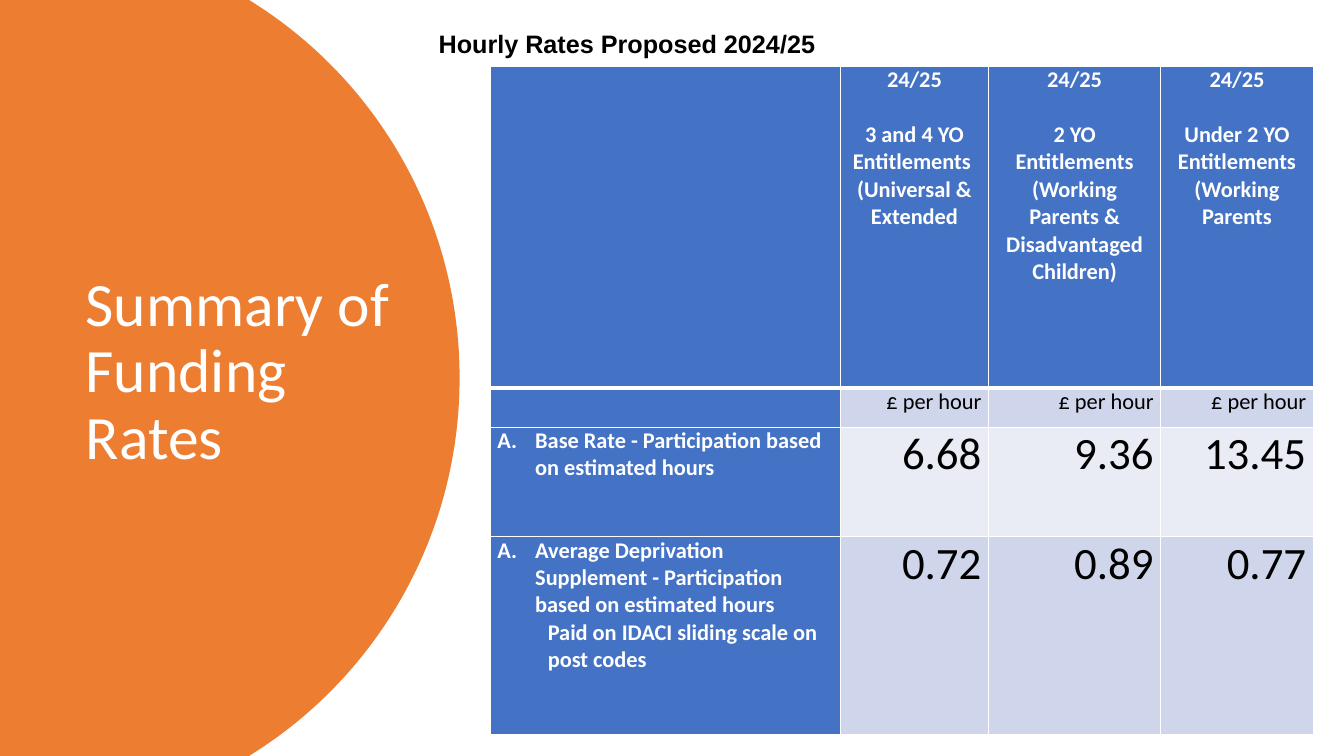
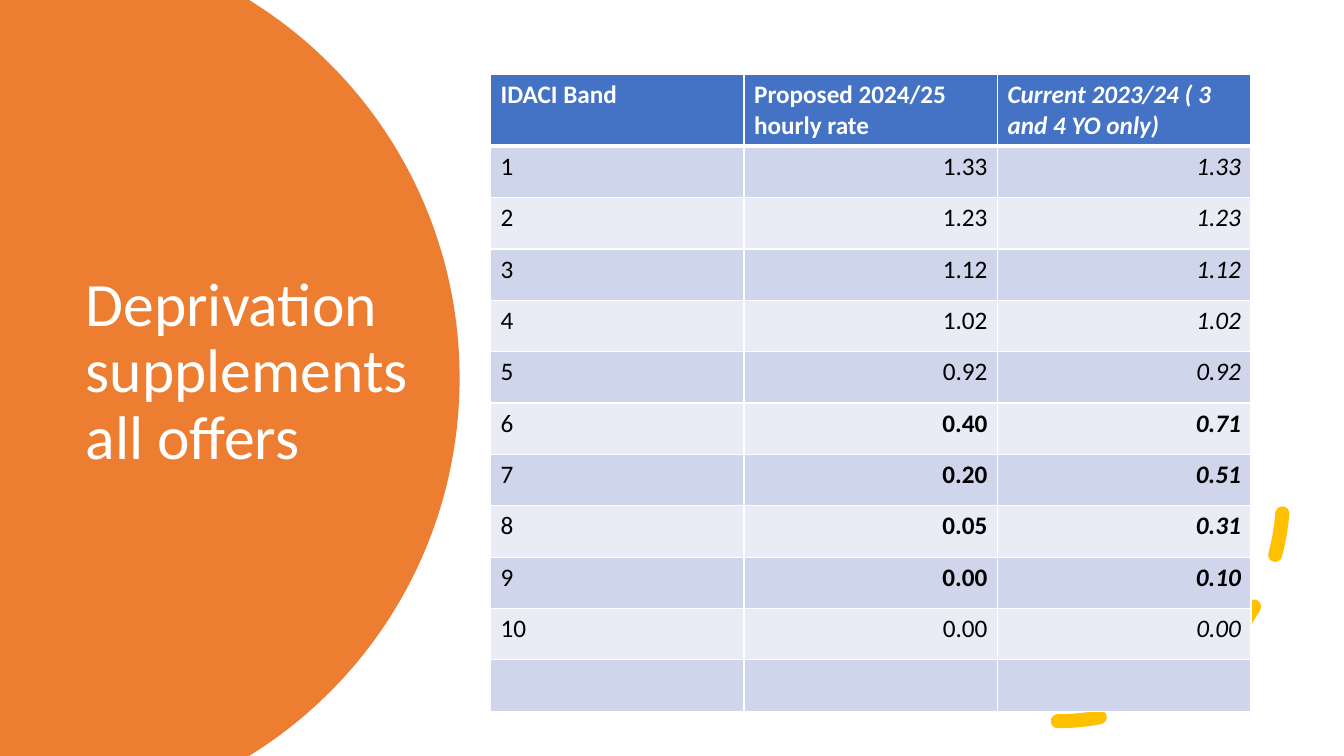
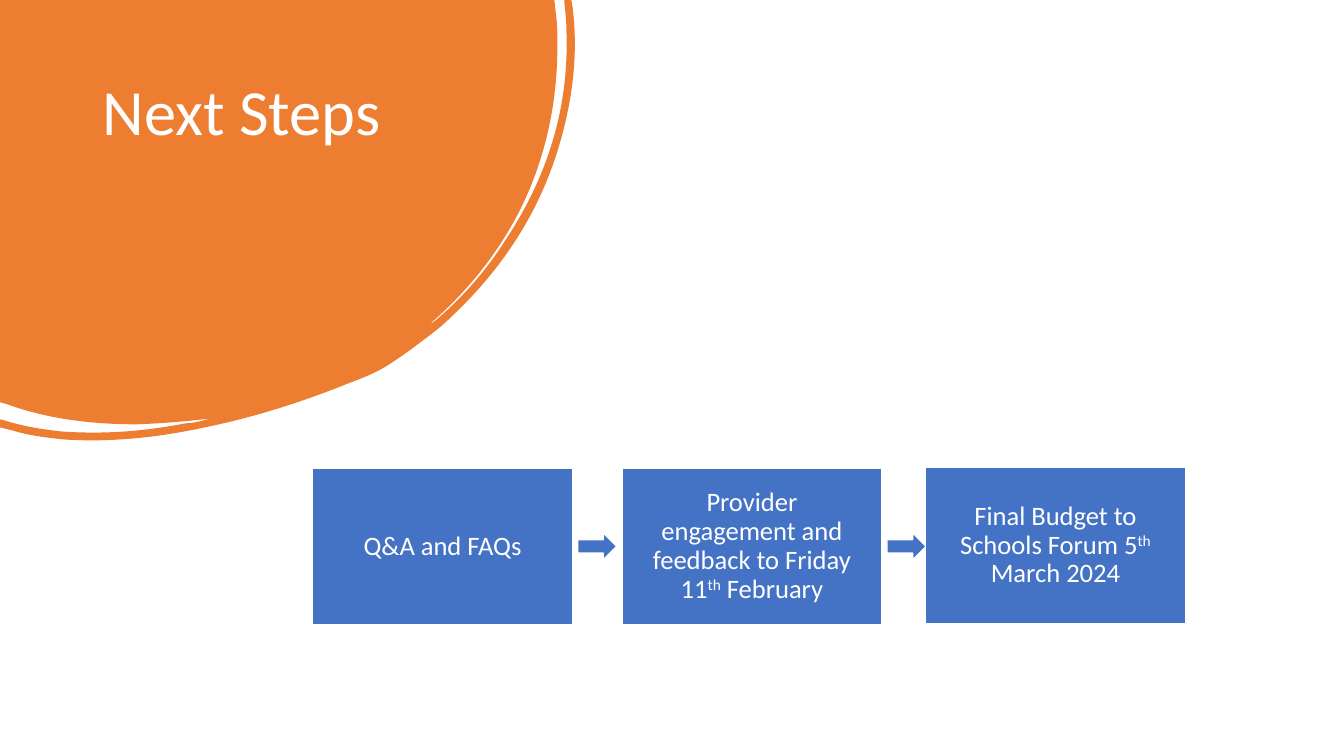
from pptx import Presentation
from pptx import util as u
from pptx.dml.color import RGBColor
from pptx.enum import dml, shapes, text
from pptx.oxml import ns
from lxml import etree

Pt = u.Pt
ORANGE, BLUE, AMBER = "ED7D31", "4472C4", "FFC000"
WHITE, BLACK = "FFFFFF", "000000"
BANDS = ("CFD5EA", "E9EBF5")
FONT = "Calibri"
LEFT, CENTER, RIGHT = text.PP_ALIGN.LEFT, text.PP_ALIGN.CENTER, text.PP_ALIGN.RIGHT

# Outlines in points: a pair is a line, six numbers are a Bezier curve.
HALF_DISC = [
    (0, 0), (178, 0), (188, 6.5),
    (273, 63.4, 328.3, 160.6, 328.3, 270),
    (328.3, 379.4, 273, 476.6, 188, 533.5),
    (178, 540), (0, 540),
]
SWOOSH = [
    (0, 0), (396, 0), (397.4, 12.2),
    (398.2, 18.7, 398.2, 25.9, 398.2, 32.4),
    (398.2, 72.7, 390.2, 110.9, 373, 146.9),
    (357.1, 179.3, 334.8, 207.4, 307.4, 231.1),
    (308.9, 231.1, 309.6, 229.7, 311, 229),
    (330.5, 212.4, 347, 193.7, 360.7, 172.1),
    (391, 126.7, 406.8, 77, 404.6, 21.6),
    (404.6, 15.1, 403.9, 8.6, 403.2, 2.2),
    (403.2, 0), (408.2, 0), (409, 5),
    (413.3, 38.9, 409, 73.4, 398.2, 108),
    (383.8, 154.1, 357.8, 193, 322.6, 226.1),
    (316.1, 232.6, 308.9, 238.3, 301.7, 243.4),
    (294.5, 249.1, 287.3, 254.2, 278.6, 259.9),
    (270, 265.7, 259.2, 270, 247.7, 274.3),
    (215.3, 287.3, 181.4, 298.1, 146.2, 305.3),
    (113, 312.5, 79.2, 316.1, 45.4, 313.9),
    (32.4, 312.5, 20.2, 311, 8.6, 307.4),
    (0, 305.3), (0, 299.5), (2.9, 300.2),
    (16.6, 304.6, 30.2, 306.7, 43.9, 308.2),
    (74.2, 310.3, 103, 308.2, 132.5, 302.4),
    (136.1, 302.4, 139, 301.7, 142.6, 301),
    (145.4, 300.2, 148.3, 299.5, 151.2, 298.8),
    (133.9, 301, 115.9, 302.4, 97.9, 303.1),
    (66.2, 303.1, 34.6, 299.5, 5, 288.7),
    (0, 287.3),
]


def rgb(value):
    return RGBColor.from_string(value)


def place(box):
    return [Pt(length) for length in box]


def paint(shape, fill, line=None):
    shape.shadow.inherit = False
    shape.fill.solid()
    shape.fill.fore_color.rgb = rgb(fill)
    if line:
        shape.line.color.rgb = rgb(line)
        shape.line.width = Pt(1)
    else:
        shape.line.fill.background()


def style(paragraph, size, color, align=LEFT, bold=False, italic=False, font=FONT):
    paragraph.alignment = align
    for run in paragraph.runs:
        run.font.name = font
        run.font.size = Pt(size)
        run.font.color.rgb = rgb(color)
        run.font.bold = bold
        run.font.italic = italic


def add_backdrop(slide, outline):
    """Draw the orange outline behind everything else."""
    points = [(Pt(x), Pt(y)) for step in outline for x, y in zip(step[::2], step[1::2])]
    builder = slide.shapes.build_freeform(*points[0], scale=1.0)
    builder.add_line_segments(points[1:], close=True)
    backdrop = builder.convert_to_shape()
    paint(backdrop, ORANGE)
    segments = iter(list(backdrop._element.iter(ns.qn("a:lnTo"))))
    for step in outline[1:]:
        segment = next(segments)
        if len(step) == 6:
            segment.tag = ns.qn("a:cubicBezTo")
            for follower in (next(segments), next(segments)):
                segment.append(follower[0])
                follower.getparent().remove(follower)
    slide.shapes._spTree.insert(2, backdrop._element)


def add_titled_slide(deck, title_text, outline, box, size=44,
                     anchor=text.MSO_ANCHOR.MIDDLE):
    slide = deck.slides.add_slide(deck.slide_layouts[5])
    title = slide.shapes.title
    title.left, title.top, title.width, title.height = place(box)
    frame = title.text_frame
    frame.text = title_text
    frame.auto_size = text.MSO_AUTO_SIZE.NONE
    frame.vertical_anchor = anchor
    for paragraph in frame.paragraphs:
        style(paragraph, size, WHITE)
        paragraph.line_spacing = 0.9
    add_backdrop(slide, outline)
    return slide


def add_dashed_arc(slide, box):
    arc = slide.shapes.add_shape(shapes.MSO_SHAPE.ARC, *place(box))
    arc.shadow.inherit = False
    arc.fill.background()
    arc.line.color.rgb = rgb(AMBER)
    arc.line.width = Pt(10)
    arc.line.dash_style = dml.MSO_LINE.DASH
    arc.line._get_or_add_ln().set("cap", "rnd")
    arc._element.spPr.xfrm.set("flipV", "1")


def add_side_title_slide(deck, title_text):
    slide = add_titled_slide(deck, title_text, HALF_DISC, (54, 90.7, 252, 351.4))
    add_dashed_arc(slide, (594.7, 193.4, 321.8, 321.8))
    return slide


def add_grid(slide, left, top, widths, heights):
    box = (left, top, sum(widths), sum(heights))
    grid = slide.shapes.add_table(len(heights), len(widths), *place(box)).table
    for column, width in zip(grid.columns, widths):
        column.width = Pt(width)
    for row, height in zip(grid.rows, heights):
        row.height = Pt(height)
    return grid


def fill_cell(cell, content, fill, size, color, **look):
    cell.fill.solid()
    cell.fill.fore_color.rgb = rgb(fill)
    cell.text_frame.text = content
    for paragraph in cell.text_frame.paragraphs:
        style(paragraph, size, color, **look)


def underline_header(grid):
    """Rule a thick white line below the first row."""
    for cell in grid.rows[0].cells:
        border = etree.Element(ns.qn("a:lnB"), w=str(Pt(3)))
        fill = etree.SubElement(border, ns.qn("a:solidFill"))
        etree.SubElement(fill, ns.qn("a:srgbClr"), val=WHITE)
        cell._tc.get_or_add_tcPr().insert(0, border)


def number_row_label(cell):
    """Letter the first paragraph and indent those below it."""
    first, *rest = cell.text_frame.paragraphs
    properties = first._p.get_or_add_pPr()
    properties.set("marL", str(Pt(27)))
    properties.set("indent", str(-Pt(27)))
    etree.SubElement(properties, ns.qn("a:buAutoNum"), type="alphaUcPeriod")
    for paragraph in rest:
        paragraph._p.get_or_add_pPr().set("marL", str(Pt(36)))


def add_rates_table(slide, left, top):
    rows = [
        ("",
         "24/25\n3 and 4 YO\nEntitlements \n(Universal & Extended",
         "24/25\n2 YO Entitlements (Working Parents & Disadvantaged Children)",
         "24/25\nUnder 2 YO\nEntitlements\n(Working Parents"),
        ("",) + ("£ per hour",) * 3,
        ("Base Rate - Participation based on estimated hours", "6.68", "9.36", "13.45"),
        ("Average Deprivation Supplement - Participation based on estimated hours\n"
         "Paid on IDACI sliding scale on post codes", "0.72", "0.89", "0.77"),
    ]
    grid = add_grid(slide, left, top, (250, 105.8, 123, 109),
                    (229.5, 28.1, 78.4, 141.1))
    for r, row in enumerate(rows):
        for c, content in enumerate(row):
            cell = grid.cell(r, c)
            cell.margin_left = cell.margin_right = Pt(5)
            cell.margin_top = cell.margin_bottom = 0
            if r == 0:
                fill_cell(cell, content, BLUE, 16, WHITE, align=CENTER, bold=True)
                if content:
                    cell.text_frame.paragraphs[0].space_after = Pt(19.5)
            elif c == 0:
                fill_cell(cell, content, BLUE, 16, WHITE, bold=True)
                if content:
                    number_row_label(cell)
            else:
                fill_cell(cell, content, BANDS[(r - 1) % 2], 16 if r == 1 else 32,
                          BLACK, align=RIGHT)
    underline_header(grid)


def add_band_table(slide, left, top):
    header = ("IDACI Band", "Proposed 2024/25 hourly rate",
              "Current 2023/24 ( 3 and 4 YO only)")
    proposed = "1.33 1.23 1.12 1.02 0.92 0.40 0.20 0.05 0.00 0.00".split()
    current = "1.33 1.23 1.12 1.02 0.92 0.71 0.51 0.31 0.10 0.00".split()
    bands = [str(n) for n in range(1, 11)]
    rows = [header, *zip(bands, proposed, current), ("", "", "")]
    grid = add_grid(slide, left, top, (181.1,) * 3, (51.2,) + (36.7,) * 11)
    for r, row in enumerate(rows):
        changed = row[1] != row[2]
        for c, content in enumerate(row):
            if r == 0:
                fill_cell(grid.cell(r, c), content, BLUE, 18, WHITE,
                          bold=True, italic=c == 2)
            else:
                fill_cell(grid.cell(r, c), content, BANDS[(r - 1) % 2], 18, BLACK,
                          align=RIGHT if c else LEFT,
                          bold=changed and c > 0, italic=c == 2)
    underline_header(grid)


def add_caption(slide, caption_text, box):
    caption = slide.shapes.add_textbox(*place(box))
    frame = caption.text_frame
    frame.word_wrap = True
    frame.vertical_anchor = text.MSO_ANCHOR.MIDDLE
    frame.text = caption_text
    style(frame.paragraphs[0], 18, BLACK, align=text.PP_ALIGN.JUSTIFY, bold=True,
          font="Arial")


def add_step(slide, pieces, box):
    """Add a step box; every second piece of its text is superscript."""
    step = slide.shapes.add_shape(shapes.MSO_SHAPE.RECTANGLE, *place(box))
    paint(step, BLUE, WHITE)
    frame = step.text_frame
    frame.word_wrap = True
    frame.vertical_anchor = text.MSO_ANCHOR.MIDDLE
    frame.margin_left = frame.margin_right = Pt(12.2)
    frame.margin_top = frame.margin_bottom = Pt(12.2)
    paragraph = frame.paragraphs[0]
    for piece in pieces:
        paragraph.add_run().text = piece
    style(paragraph, 19, WHITE, align=CENTER)
    paragraph.line_spacing = 0.9
    for run in paragraph.runs[1::2]:
        run.font._element.set("baseline", "30000")


def add_process(slide, top):
    steps = [
        (223.2, top, ["Q&A and FAQs"]),
        (444.2, top, ["Provider engagement and feedback to Friday 11", "th", " February"]),
        (661, top - 0.6, ["Final Budget to Schools Forum 5", "th", " March 2024"]),
    ]
    width, height = 185.8, 111.6
    arrow_width, arrow_height = 28, 19.4
    for i, (left, step_top, pieces) in enumerate(steps):
        add_step(slide, pieces, (left, step_top, width, height))
        if i < len(steps) - 1:
            arrow_box = (left + width + 3.6, top + (height - arrow_height) / 2,
                         arrow_width, arrow_height)
            arrow = slide.shapes.add_shape(shapes.MSO_SHAPE.RIGHT_ARROW,
                                           *place(arrow_box))
            paint(arrow, BLUE, WHITE)


def main():
    deck = Presentation()
    deck.slide_width, deck.slide_height = Pt(960), Pt(540)

    rates = add_side_title_slide(deck, "Summary of Funding Rates")
    add_rates_table(rates, 350.3, 47.5)
    add_caption(rates, "Hourly Rates Proposed 2024/25", (306.2, 16.6, 650, 29))

    supplements = add_side_title_slide(deck, "Deprivation supplements\vall offers")
    add_band_table(supplements, 350.4, 53.3)

    next_steps = add_titled_slide(deck, "Next Steps", SWOOSH, (66.2, 53.3, 253.4, 159.8),
                                  size=46, anchor=text.MSO_ANCHOR.TOP)
    add_process(next_steps, 334.5)

    deck.save("out.pptx")


if __name__ == "__main__":
    main()
